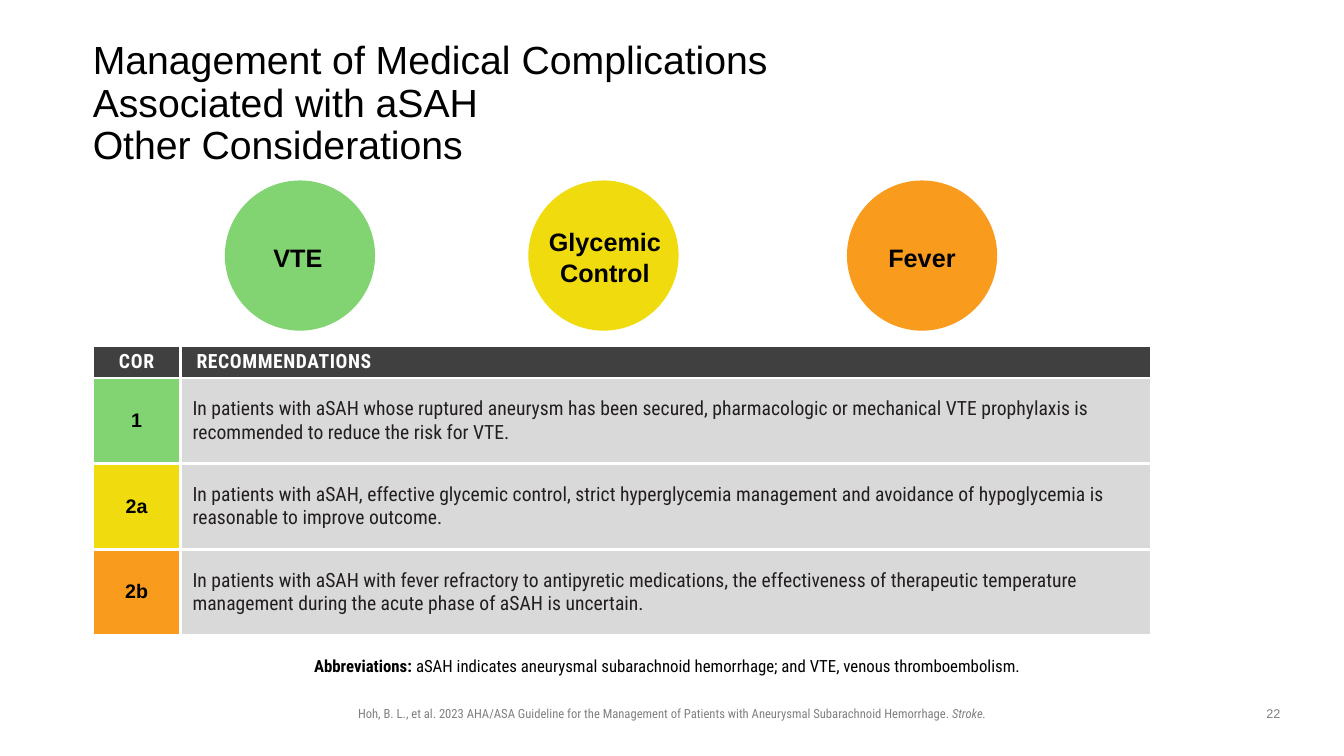
from lxml.etree import SubElement
from pptx import Presentation
from pptx.dml.color import RGBColor
from pptx.enum.shapes import MSO_SHAPE
from pptx.enum.text import MSO_ANCHOR, MSO_AUTO_SIZE, PP_ALIGN
from pptx.oxml import parse_xml
from pptx.oxml.ns import nsdecls, qn
from pptx.util import Inches, Pt

SANS, CONDENSED = "Arial", "Roboto Condensed"
GREEN, YELLOW, ORANGE = "82D472", "F0DB0E", "F99B1D"
BLACK, WHITE, GREY = "000000", "FFFFFF", "808080"


def style(paragraph, size, face, color, bold=False, align=PP_ALIGN.CENTER):
    paragraph.alignment = align
    paragraph.space_before = Pt(0)
    for run in paragraph.runs:
        run.font.size = Pt(size)
        run.font.name = face
        run.font.bold = bold
        run.font.color.rgb = RGBColor.from_string(color)


def add_label(text, left, top, width, height, size, face, color, bold=False):
    frame = slide.shapes.add_textbox(
        Inches(left), Inches(top), Inches(width), Inches(height)).text_frame
    frame.word_wrap = True
    frame.text = text
    style(frame.paragraphs[0], size, face, color, bold)
    return frame.paragraphs[0]


deck = Presentation()
deck.slide_width, deck.slide_height = Inches(13.33), Inches(7.5)
slide = deck.slides.add_slide(deck.slide_layouts[1])
title, abbreviations = slide.placeholders
MARGIN = 0.92

# Title
title.left, title.top = Inches(MARGIN), Inches(0.4)
title.width, title.height = Inches(10.82), Inches(1.27)
heading = title.text_frame
heading.text = ("Management of Medical Complications \v"
                "Associated with\u00a0aSAH\vOther Considerations")
heading.auto_size = MSO_AUTO_SIZE.NONE
heading.vertical_anchor = MSO_ANCHOR.MIDDLE
heading.margin_left = heading.margin_right = 0
heading.margin_top = heading.margin_bottom = 0
style(heading.paragraphs[0], 28, SANS, BLACK, align=PP_ALIGN.LEFT)
heading.paragraphs[0].line_spacing = 0.9

# Topic circles: name, colour, circle left, then label left, top, width, height
DIAMETER = 1.49
topics = [
    ("VTE", GREEN, 2.23, (2.52, 2.35, 0.87, 0.4)),
    ("Glycemic Control", YELLOW, 5.24, (5.26, 2.2, 1.48, 0.71)),
    ("Fever", ORANGE, 8.4, (8.66, 2.35, 0.97, 0.4)),
]
for topic, color, left, label_box in topics:
    circle = slide.shapes.add_shape(
        MSO_SHAPE.OVAL, Inches(left), Inches(1.79), Inches(DIAMETER), Inches(DIAMETER))
    circle.shadow.inherit = False
    circle.fill.solid()
    circle.fill.fore_color.rgb = RGBColor.from_string(color)
    circle.line.fill.background()
    add_label(topic, *label_box, 18, SANS, BLACK, bold=True)

# Recommendations table
rows = [
    ("COR", "RECOMMENDATIONS", "404040"),
    ("1", "In patients with aSAH whose ruptured aneurysm has been secured, pharmacologic "
     "or mechanical VTE prophylaxis is recommended to reduce the risk for VTE.", GREEN),
    ("2a", "In patients with aSAH, effective glycemic control, strict hyperglycemia "
     "management and avoidance of hypoglycemia is reasonable to improve outcome.", YELLOW),
    ("2b", "In patients with aSAH with fever refractory to antipyretic medications, the "
     "effectiveness of therapeutic temperature management during the acute phase of "
     "aSAH is uncertain.", ORANGE),
]
recommendations = slide.shapes.add_table(
    len(rows), 2, Inches(MARGIN), Inches(3.43), Inches(10.5), Inches(2.87)).table
recommendations.horz_banding = False
for column, width in zip(recommendations.columns, (0.87, 9.63)):
    column.width = Inches(width)

for r, (cor, advice, color) in enumerate(rows):
    header = r == 0
    recommendations.rows[r].height = Inches(0.32 if header else 0.85)
    for c, text in enumerate((cor, advice)):
        cell = recommendations.cell(r, c)
        cell.text = text
        cell.vertical_anchor = MSO_ANCHOR.MIDDLE
        cell.margin_left = cell.margin_right = Inches(0.1 if header else 0.05)
        cell.margin_top = cell.margin_bottom = Inches(0 if header else 0.05)
        paragraph = cell.text_frame.paragraphs[0]
        style(paragraph, 14,
              CONDENSED if header or c else SANS,
              WHITE if header else "231F20" if c else BLACK,
              bold=header or c == 0,
              align=PP_ALIGN.LEFT if c else PP_ALIGN.CENTER)
        if c:
            paragraph._p.get_or_add_pPr().set("marL", str(Inches(0.06 if header else 0.07)))
        if header:
            paragraph.runs[0].font._element.set("spc", "40" if c else "50")
        # White rules on all four sides, ahead of the fill
        properties = cell._tc.get_or_add_tcPr()
        for side in ("lnL", "lnR", "lnT", "lnB"):
            properties.append(parse_xml(
                f'<a:{side} {nsdecls("a")} w="{Pt(2.25)}"><a:solidFill>'
                f'<a:srgbClr val="{WHITE}"/></a:solidFill></a:{side}>'))
        cell.fill.solid()
        cell.fill.fore_color.rgb = RGBColor.from_string(
            "D9D9D9" if c and not header else color)

# Abbreviations
abbreviations.left, abbreviations.top = Inches(MARGIN), Inches(6.48)
abbreviations.width, abbreviations.height = Inches(11.5), Inches(0.3)
key = abbreviations.text_frame
key.auto_size = MSO_AUTO_SIZE.NONE
key.margin_left = 0
key_line = key.paragraphs[0]
indent = key_line._p.get_or_add_pPr()
indent.set("marL", "0")
indent.set("indent", "0")
SubElement(indent, qn("a:buNone"))
for part in ("Abbreviations: ", "aSAH indicates aneurysmal subarachnoid hemorrhage; "
             "and VTE, venous thromboembolism."):
    key_line.add_run().text = part
style(key_line, 12, CONDENSED, BLACK)
key_line.line_spacing = 0.9
key_line.runs[0].font.bold = True

# Footer: citation and slide number
citation = add_label(
    "Hoh, B. L., et al. 2023 AHA/ASA Guideline for the Management of Patients with "
    "Aneurysmal Subarachnoid Hemorrhage. ", 2.94, 6.95, 7.45, 0.25, 9, CONDENSED, GREY)
citation.add_run().text = "Stroke."
style(citation, 9, CONDENSED, GREY)
citation.runs[1].font.italic = True
add_label("22", 12.42, 6.95, 0.42, 0.26, 9, SANS, GREY)

deck.save("out.pptx")
